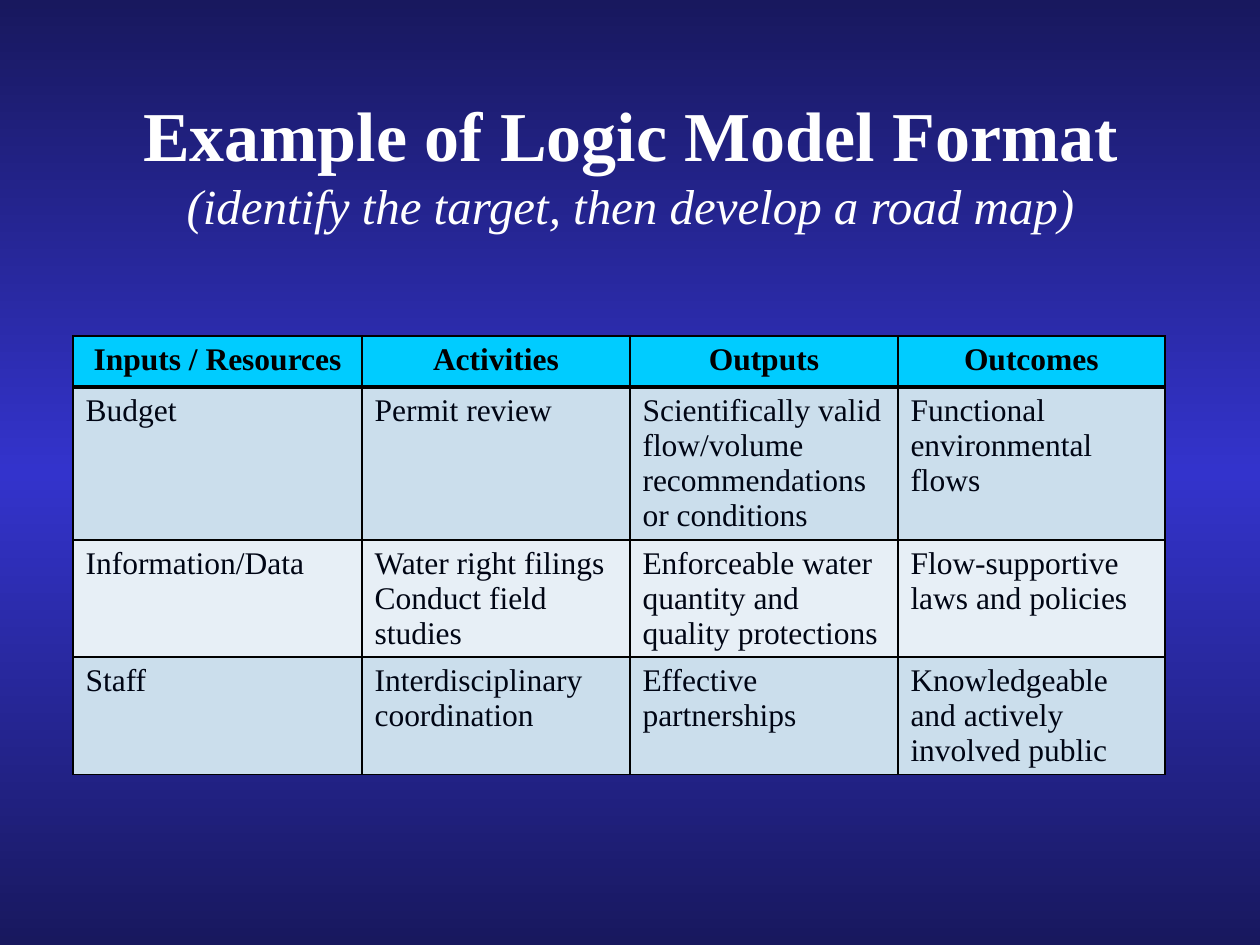
"""Build a slide with a logic model table under a two-line title."""
import copy
from dataclasses import dataclass

import lxml.etree
import pptx
import pptx.dml.color
import pptx.enum.text
import pptx.oxml.ns
import pptx.util

EMU_PER_PX = 914400 / 126
FONT = "Times New Roman"
COLORS = {
    "edge": "18185E",
    "middle": "3333CC",
    "title": "FFFFFF",
    "header": "00CCFF",
    "header_text": "000000",
    "dark_band": "CBDEEC",
    "light_band": "E7EFF6",
    "body_text": "000514",
    "border": "000000",
}
COLUMN_WIDTHS = (289, 268, 268, 267)


@dataclass
class TableRow:
    height: int
    fill: str
    texts: tuple[str, ...]
    header: bool = False


ROWS = (
    TableRow(51, "header", ("Inputs / Resources", "Activities", "Outputs", "Outcomes"), True),
    TableRow(153, "dark_band", (
        "Budget",
        "Permit review",
        "Scientifically valid flow/volume recommendations or conditions",
        "Functional environmental flows",
    )),
    TableRow(117, "light_band", (
        "Information/Data",
        "Water right filings\nConduct field studies",
        "Enforceable water quantity and quality protections",
        "Flow-supportive laws and policies",
    )),
    TableRow(117, "dark_band", (
        "Staff",
        "Interdisciplinary coordination",
        "Effective partnerships",
        "Knowledgeable and actively involved public",
    )),
)


def px(length: int) -> pptx.util.Emu:
    return pptx.util.Emu(round(length * EMU_PER_PX))


def rgb(name: str) -> pptx.dml.color.RGBColor:
    return pptx.dml.color.RGBColor.from_string(COLORS[name])


def format_run(run, size: int, color: str, bold: bool = False, italic: bool = False) -> None:
    font = run.font
    font.name, font.size = FONT, pptx.util.Pt(size)
    font.bold, font.italic = bold, italic
    font.color.rgb = rgb(color)


def paint_background(slide) -> None:
    fill = slide.background.fill
    fill.gradient()
    fill.gradient_angle = 90
    stop_list = slide.element.find(".//" + pptx.oxml.ns.qn("a:gsLst"))
    stop_list.append(copy.deepcopy(stop_list[-1]))
    stops = zip(fill.gradient_stops, (0, 0.5, 1), ("edge", "middle", "edge"))
    for stop, position, color in stops:
        stop.position = position
        stop.color.rgb = rgb(color)


def add_title(slide) -> None:
    title = slide.shapes.title
    title.left, title.top, title.width, title.height = map(px, (95, 84, 1071, 158))
    frame = title.text_frame
    frame.text = "Example of Logic Model Format\v(identify the target, then develop a road map)"
    frame.word_wrap = True
    frame.auto_size = pptx.enum.text.MSO_AUTO_SIZE.NONE
    frame.vertical_anchor = pptx.enum.text.MSO_ANCHOR.MIDDLE
    paragraph = frame.paragraphs[0]
    paragraph.alignment = pptx.enum.text.PP_ALIGN.CENTER
    heading, subtitle = paragraph.runs
    format_run(heading, 40, "title", bold=True)
    format_run(subtitle, 28, "title", italic=True)


def add_borders(cell, top: int, bottom: int) -> None:
    properties = cell._tc.get_or_add_tcPr()
    widths = (("a:lnL", 1), ("a:lnR", 1), ("a:lnT", top), ("a:lnB", bottom))
    for index, (tag, width) in enumerate(widths):
        line = lxml.etree.Element(pptx.oxml.ns.qn(tag), w=str(pptx.util.Pt(width)))
        fill = lxml.etree.SubElement(line, pptx.oxml.ns.qn("a:solidFill"))
        lxml.etree.SubElement(fill, pptx.oxml.ns.qn("a:srgbClr"), val=COLORS["border"])
        properties.insert(index, line)


def fill_cell(cell, text: str, row: TableRow) -> None:
    cell.fill.solid()
    cell.fill.fore_color.rgb = rgb(row.fill)
    cell.text_frame.text = text
    for paragraph in cell.text_frame.paragraphs:
        if row.header:
            paragraph.alignment = pptx.enum.text.PP_ALIGN.CENTER
        color = "header_text" if row.header else "body_text"
        format_run(paragraph.runs[0], 18, color, bold=row.header)


def add_logic_table(slide) -> None:
    height = sum(row.height for row in ROWS)
    bounds = map(px, (73, 336, sum(COLUMN_WIDTHS), height))
    table = slide.shapes.add_table(len(ROWS), len(COLUMN_WIDTHS), *bounds).table
    table.horz_banding = False
    for column, width in zip(table.columns, COLUMN_WIDTHS):
        column.width = px(width)
    for row_index, row in enumerate(ROWS):
        table.rows[row_index].height = px(row.height)
        for column_index, text in enumerate(row.texts):
            cell = table.cell(row_index, column_index)
            fill_cell(cell, text, row)
            add_borders(cell, 3 if row_index == 1 else 1, 3 if row.header else 1)


def main() -> None:
    presentation = pptx.Presentation()
    presentation.slide_width, presentation.slide_height = px(1260), px(945)
    slide = presentation.slides.add_slide(presentation.slide_layouts[5])
    paint_background(slide)
    add_title(slide)
    add_logic_table(slide)
    presentation.save("out.pptx")


if __name__ == "__main__":
    main()
